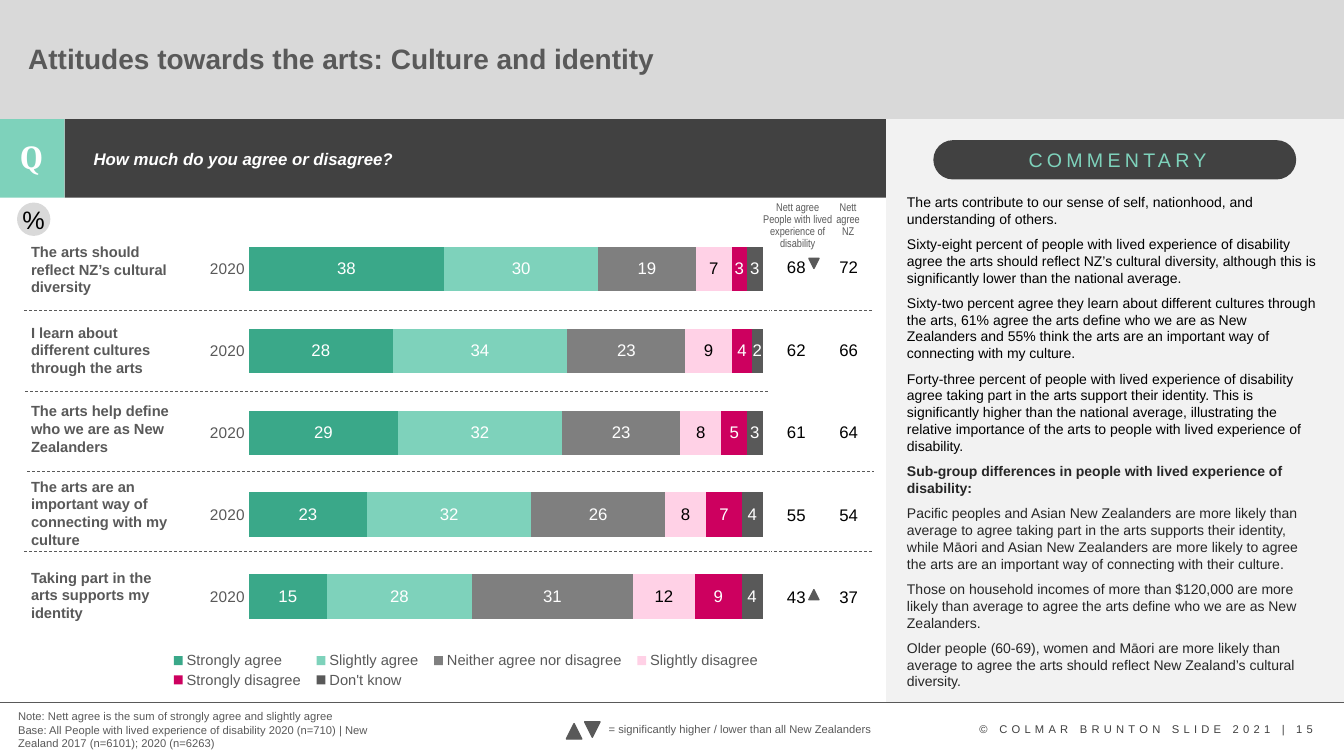
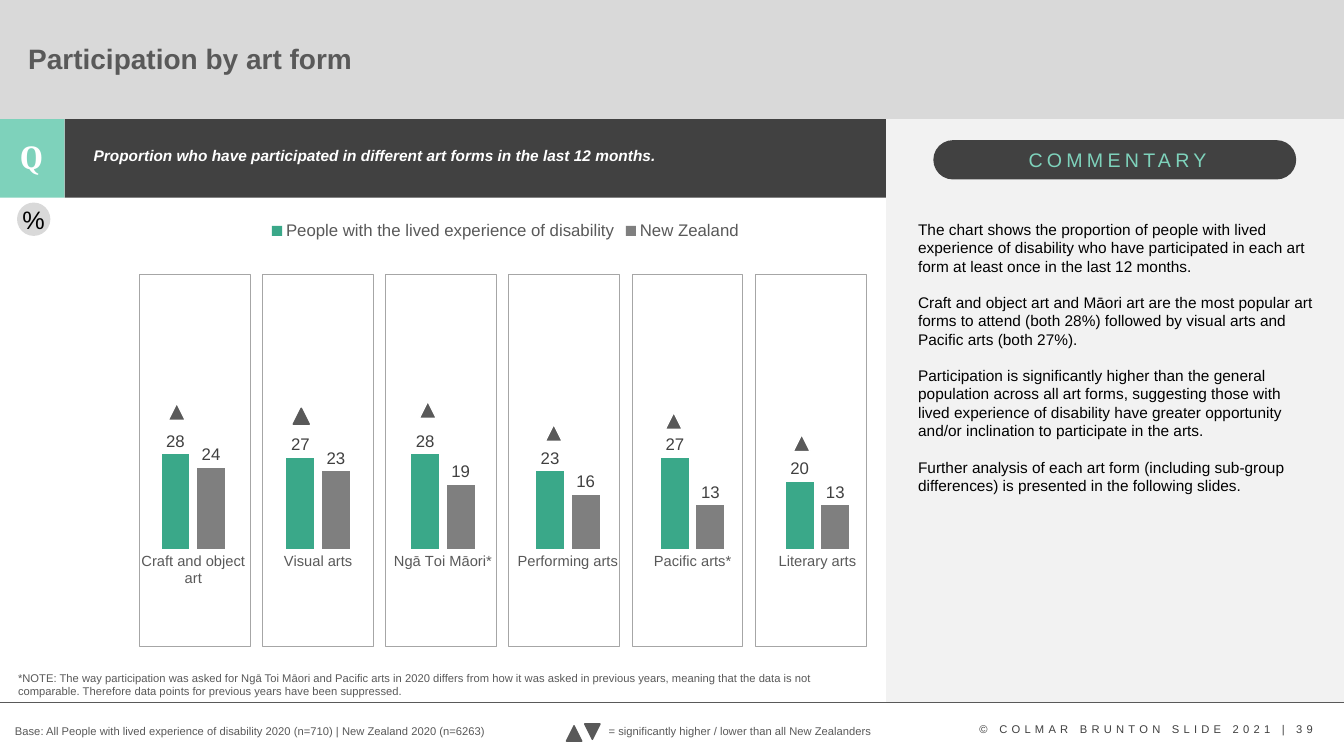
from dataclasses import dataclass

from lxml.etree import SubElement
from pptx import Presentation
from pptx.chart.data import CategoryChartData
from pptx.dml.color import RGBColor
from pptx.enum.chart import XL_CHART_TYPE as ChartType
from pptx.enum.chart import XL_LABEL_POSITION as LabelPosition
from pptx.enum.chart import XL_LEGEND_POSITION as LegendPosition
from pptx.enum.chart import XL_TICK_MARK as TickMark
from pptx.enum.dml import MSO_LINE as Dash
from pptx.enum.shapes import MSO_CONNECTOR as Connector
from pptx.enum.shapes import MSO_SHAPE as Shape
from pptx.enum.text import MSO_ANCHOR as Anchor
from pptx.enum.text import PP_ALIGN as Align
from pptx.oxml import parse_xml
from pptx.oxml.ns import nsdecls, qn
from pptx.util import Pt


@dataclass(frozen=True)
class Theme:
    font: str = "Arial"
    narrow: str = "Arial Narrow"
    serif: str = "Cambria"
    white: str = "FFFFFF"
    black: str = "000000"
    ink: str = "262626"
    text: str = "595959"
    value: str = "404040"
    dark: str = "414141"
    band: str = "D9D9D9"
    panel: str = "F2F2F2"
    frame: str = "A6A6A6"
    green: str = "3AA889"
    mint: str = "7ED2BB"
    gray: str = "7F7F7F"
    blush: str = "FFD1E6"
    crimson: str = "CD005F"
    title: float = 20
    letter: float = 24
    percent: float = 18
    pill: float = 14
    body: float = 12
    medium: float = 11
    label: float = 10.5
    small: float = 10
    note: float = 8


T = Theme()

# Statement, top of its text, answers, nett agree (disability, NZ)
STATEMENTS = [
    ("The arts should reflect NZ’s cultural diversity", 169.9, (38, 30, 19, 7, 3, 3), (68, 72)),
    ("I learn about different cultures through the arts", 227.5, (28, 34, 23, 9, 4, 2), (62, 66)),
    ("The arts help define who we are as New Zealanders", 283.7, (29, 32, 23, 8, 5, 3), (61, 64)),
    ("The arts are an important way of connecting with my culture", 337.7,
     (23, 32, 26, 8, 7, 4), (55, 54)),
    ("Taking part in the arts supports my identity", 402.5, (15, 28, 31, 12, 9, 4), (43, 37)),
]
# Answer, bar colour, label colour
ANSWERS = [
    ("Strongly agree", T.green, T.white),
    ("Slightly agree", T.mint, T.white),
    ("Neither agree nor disagree", T.gray, T.white),
    ("Slightly disagree", T.blush, T.black),
    ("Strongly disagree", T.crimson, T.white),
    ("Don't know", T.text, T.white),
]
DIVIDER_LEFTS = (17.3, 18, 19.4, 17.3)
NETT_HEADS = [
    (537.8, 64.1, ["Nett agree People with lived experience of disability"]),
    (581, 49.7, ["Nett", "agree", "NZ"]),
]
CULTURE_COMMENTS = [
    "The arts contribute to our sense of self, nationhood, and understanding of others.",
    "Sixty-eight percent of people with lived experience of disability agree the arts should "
    "reflect NZ’s cultural diversity, although this is significantly lower than the national "
    "average.",
    "Sixty-two percent agree they learn about different cultures through the arts, 61% agree the "
    "arts define who we are as New Zealanders and 55% think the arts are an important way of "
    "connecting with my culture.",
    "Forty-three percent of people with lived experience of disability agree taking part in the "
    "arts support their identity. This is significantly higher than the national average, "
    "illustrating the relative importance of the arts to people with lived experience of "
    "disability.",
    ("Sub-group differences in people with lived experience of disability:",
     {"color": T.ink, "bold": True}),
    ("Pacific peoples and Asian New Zealanders are more likely than average to agree taking part "
     "in the arts supports their identity, while Māori and Asian New Zealanders are more likely "
     "to agree the arts are an important way of connecting with their culture.",
     {"color": T.ink}),
    ("Those on household incomes of more than $120,000 are more likely than average to agree the "
     "arts define who we are as New Zealanders.", {"color": T.ink}),
    ("Older people (60-69), women and Māori are more likely than average to agree the arts should "
     "reflect New Zealand’s cultural diversity.", {"color": T.ink}),
]
CULTURE_NOTES = [
    "Note: Nett agree is the sum of strongly agree and slightly agree",
    "Base: All People with lived experience of disability 2020 (n=710) | New Zealand 2017 "
    "(n=6101); 2020 (n=6263)",
]

# Art form, shares (disability, NZ), marker (left, top, size, outline)
ART_FORMS = [
    ("Craft and object art", (28, 24), (120.2, 288, 12.2, T.white)),
    ("Visual arts", (27, 23), (209.5, 291.6, 11.4, T.text)),
    ("Ngā Toi Māori*", (28, 19), (299.5, 286.6, 12.2, T.white)),
    ("Performing arts", (23, 16), (389.5, 303.1, 12.2, T.white)),
    ("Pacific arts*", (27, 13), (475.2, 294.5, 12.2, T.white)),
    ("Literary arts", (20, 13), (566.6, 310.3, 12.2, T.white)),
]
GROUPS = [
    ("People with the lived experience of disability", T.green, T.value),
    ("New Zealand", T.gray, T.value),
]
FORM_COMMENTS = [
    "The chart shows the proportion of people with lived experience of disability who have "
    "participated in each art form at least once in the last 12 months.",
    "Craft and object art and Māori art are the most popular art forms to attend (both 28%) "
    "followed by visual arts and Pacific arts (both 27%).",
    "Participation is significantly higher than the general population across all art forms, "
    "suggesting those with lived experience of disability have greater opportunity and/or "
    "inclination to participate in the arts.",
    "Further analysis of each art form (including sub-group differences) is presented in the "
    "following slides.",
]
SUPPRESSED = (
    "*NOTE: The way participation was asked for Ngā Toi Māori and Pacific arts in 2020 differs "
    "from how it was asked in previous years, meaning that the data is not comparable. Therefore "
    "data points for previous years have been suppressed."
)
FORM_BASE = ("Base: All People with lived experience of disability 2020 (n=710) | "
             "New Zealand 2020 (n=6263)")


def rgb(value):
    return RGBColor.from_string(value)


def style_font(font, size, color, name=T.font, bold=False, italic=False):
    font.size, font.name, font.bold, font.italic = Pt(size), name, bold, italic
    font.color.rgb = rgb(color)


def write(frame, paragraphs, size, align=Align.LEFT, gap=0, line=None, tracking=0, **look):
    """Fill a text frame; a paragraph is a string or (string, font overrides)."""
    for index, item in enumerate(paragraphs):
        words, changes = (item, {}) if isinstance(item, str) else item
        para = frame.add_paragraph() if index else frame.paragraphs[0]
        para.alignment = align
        if index and gap:
            para.space_before = Pt(gap)
        if line:
            para.line_spacing = line
        span = para.add_run()
        span.text = words
        style_font(span.font, size, **{"color": T.text, **look, **changes})
        if tracking:
            span.font._element.set("spc", str(tracking * 100))


def add_text(page, at, paragraphs, size, anchor=Anchor.TOP, **look):
    frame = page.shapes.add_textbox(*map(Pt, at)).text_frame
    frame.word_wrap = True
    frame.vertical_anchor = anchor
    write(frame, paragraphs, size, **look)


def add_block(page, kind, at, fill=None, line=None, width=1):
    block = page.shapes.add_shape(kind, *map(Pt, at))
    block.shadow.inherit = False
    if fill:
        block.fill.solid()
        block.fill.fore_color.rgb = rgb(fill)
    else:
        block.fill.background()
    if line:
        block.line.color.rgb = rgb(line)
        block.line.width = Pt(width)
    else:
        block.line.fill.background()
    return block


def add_caption(block, words, size, insets=(0, 0, 0, 0), **look):
    frame = block.text_frame
    frame.margin_left, frame.margin_top, frame.margin_right, frame.margin_bottom = map(Pt, insets)
    frame.vertical_anchor = Anchor.MIDDLE
    frame.word_wrap = False
    write(frame, [words], size, align=Align.CENTER, **look)


def add_marker(page, left, top, size, line=T.text, down=False):
    marker = add_block(page, Shape.ISOSCELES_TRIANGLE, (left, top, size, size), T.text, line)
    marker.rotation = 180 if down else 0


def add_rule(page, left, right, top, dash=None):
    rule = page.shapes.add_connector(Connector.STRAIGHT, Pt(left), Pt(top), Pt(right), Pt(top))
    rule.line.color.rgb = rgb(T.text)
    rule.line.width = Pt(0.5)
    if dash:
        rule.line.dash_style = dash
    SubElement(rule._element.spPr, qn("a:effectLst"))


def set_layout(parent, index, box, inner=False):
    """Place a plot area or legend by fractions of the chart."""
    for old in parent.findall(qn("c:layout")):
        parent.remove(old)
    target = '<c:layoutTarget val="inner"/>' if inner else ""
    modes = "".join(f'<c:{axis}Mode val="edge"/>' for axis in "xy")
    sizes = "".join(f'<c:{key} val="{value}"/>' for key, value in zip("xywh", box))
    parent.insert(index, parse_xml(
        f'<c:layout {nsdecls("c")}><c:manualLayout>{target}{modes}{sizes}'
        "</c:manualLayout></c:layout>"))


def add_bars(page, kind, at, categories, series, rows, plot_box, gap, overlap, position,
             axis_size, legend_place, legend_size):
    data = CategoryChartData()
    data.categories = categories
    for (name, *_), values in zip(series, zip(*rows)):
        data.add_series(name, values)
    chart = page.shapes.add_chart(kind, *map(Pt, at), data).chart
    chart.has_title = False
    style_font(chart.font, T.small, T.black)
    plot = chart.plots[0]
    plot.gap_width, plot.overlap, plot.vary_by_categories = gap, overlap, False
    for bars, (_, fill, ink) in zip(plot.series, series):
        bars.format.fill.solid()
        bars.format.fill.fore_color.rgb = rgb(fill)
        labels = bars.data_labels
        labels.show_value = True
        labels.position = position
        style_font(labels.font, T.body, ink)
    axis = chart.category_axis
    axis.major_tick_mark = TickMark.NONE
    axis.format.line.fill.background()
    style_font(axis.tick_labels.font, axis_size, T.text)
    chart.value_axis.has_major_gridlines = False
    chart.value_axis.visible = False
    chart.has_legend = True
    chart.legend.position = legend_place
    chart.legend.include_in_layout = False
    style_font(chart.legend.font, legend_size, T.text)
    set_layout(chart._chartSpace.chart.plotArea, 0, plot_box, inner=True)
    return chart


def add_page(deck, number, title, question, question_top, question_size, key_top):
    """Add a slide with the bands, panel, pill, footer and marker key."""
    page = deck.slides.add_slide(deck.slide_layouts[6])
    add_block(page, Shape.RECTANGLE, (0, -1.4, 960, 86.4), T.band)
    add_text(page, (692.6, 512.6, 260, 17.3), [f"© COLMAR BRUNTON SLIDE 2021 | {number}"],
             T.note, color=T.value, tracking=3)
    add_block(page, Shape.RECTANGLE, (632.9, 85, 327.1, 416.9), T.panel)
    add_rule(page, 0, 960, 501.8)
    add_block(page, Shape.RECTANGLE, (46.1, 85, 586.8, 56.2), T.dark)
    square = add_block(page, Shape.RECTANGLE, (0, 85, 46.1, 56.2), T.mint)
    add_caption(square, "Q", T.letter, (0, 0, 1, 3), name=T.serif, color=T.white, bold=True)
    pill = add_block(page, Shape.ROUNDED_RECTANGLE, (666.7, 100.1, 259.2, 28.1), T.dark)
    pill.adjustments[0] = 0.5
    add_caption(pill, "COMMENTARY", T.pill, (4, 0, 0, 0), color=T.mint, tracking=3)
    add_text(page, (13, 15.1, 805.7, 56.2), [title], T.title, Anchor.MIDDLE, bold=True, line=0.9)
    add_text(page, (59.8, question_top, 547.2, 33.1), [question], question_size,
             color=T.white, bold=True, italic=True, line=0.9)
    circle = add_block(page, Shape.OVAL, (12.2, 144.7, 23.8, 23.8), T.band)
    add_caption(circle, "%", T.percent, color=T.black)
    add_text(page, (427.7, key_top, 212, 17.3),
             ["= significantly higher / lower than all New Zealanders"], T.note)
    add_marker(page, 404.6, key_top + 4.3, 11)
    add_marker(page, 417.6, key_top + 3, 11, down=True)
    return page


def build_culture(deck):
    page = add_page(deck, 15, "Attitudes towards the arts: Culture and identity",
                    "How much do you agree or disagree?", 104.4, T.body, 512.6)
    chart = add_bars(page, ChartType.BAR_STACKED_100, (103, 101.5, 450.7, 416.9),
                     ["2020"] * len(STATEMENTS), ANSWERS,
                     [answers for _, _, answers, _ in reversed(STATEMENTS)],
                     (0.166, 0.147, 0.814, 0.702), 85, 100, LabelPosition.CENTER,
                     T.medium, LegendPosition.BOTTOM, T.label)
    set_layout(chart.legend._element, 1, (0.03, 0.87, 0.96, 0.07))
    for words, top, *_ in STATEMENTS:
        add_text(page, (15.1, top, 117.4, 45.4), [words], T.label, bold=True)
    for index, left in enumerate(DIVIDER_LEFTS):
        add_rule(page, left, left + 605.5, 221.8 + 57.4 * index, Dash.DASH)

    table = page.shapes.add_table(len(STATEMENTS), 2, Pt(550.1), Pt(162), Pt(74.9), Pt(294.5)).table
    table.first_row = table.horz_banding = False
    for row, (*_, netts) in enumerate(STATEMENTS):
        for column, nett in enumerate(netts):
            cell = table.cell(row, column)
            cell.fill.background()
            cell.vertical_anchor = Anchor.MIDDLE
            write(cell.text_frame, [str(nett)], T.body, align=Align.CENTER, color=T.black)
    for left, width, head in NETT_HEADS:
        add_text(page, (left, 140.4, width, 42.5), head, T.note, name=T.narrow,
                 align=Align.CENTER, line=0.9)
    add_marker(page, 577.8, 184.5, 7.2, down=True)
    add_marker(page, 577.8, 421.2, 7.2)
    add_text(page, (640.8, 134.6, 306.7, 365), CULTURE_COMMENTS, T.small, color=T.black, gap=6)
    add_text(page, (5.8, 503.3, 273.6, 36), CULTURE_NOTES, T.note)


def build_forms(deck):
    page = add_page(deck, 39, "Participation by art form",
                    "Proportion who have participated in different art forms in the last 12 months.",
                    102.2, T.medium, 514.1)
    chart = add_bars(page, ChartType.COLUMN_CLUSTERED, (83.5, 150.5, 555.1, 274.3),
                     [name for name, *_ in ART_FORMS], GROUPS,
                     [shares for _, shares, _ in ART_FORMS],
                     (0.018, 0, 0.964, 0.882), 219, -27, LabelPosition.OUTSIDE_END,
                     T.label, LegendPosition.TOP, T.body)
    chart.value_axis.minimum_scale, chart.value_axis.maximum_scale = 0, 100
    for index, (*_, marker) in enumerate(ART_FORMS):
        add_block(page, Shape.RECTANGLE, (99.4 + 88 * index, 195.8, 79.2, 265.7),
                  line=T.frame, width=0.5)
        add_marker(page, *marker)
    add_text(page, (648.7, 153.4, 298.8, 207.4), FORM_COMMENTS, T.medium, color=T.black, gap=12.65)
    add_text(page, (5.8, 475.9, 614.2, 26.6), [SUPPRESSED], T.note)
    add_text(page, (3.6, 514.1, 385.9, 17.3), [FORM_BASE], T.note)


def main():
    deck = Presentation()
    deck.slide_width, deck.slide_height = Pt(960), Pt(540)
    build_culture(deck)
    build_forms(deck)
    deck.save("out.pptx")


if __name__ == "__main__":
    main()
